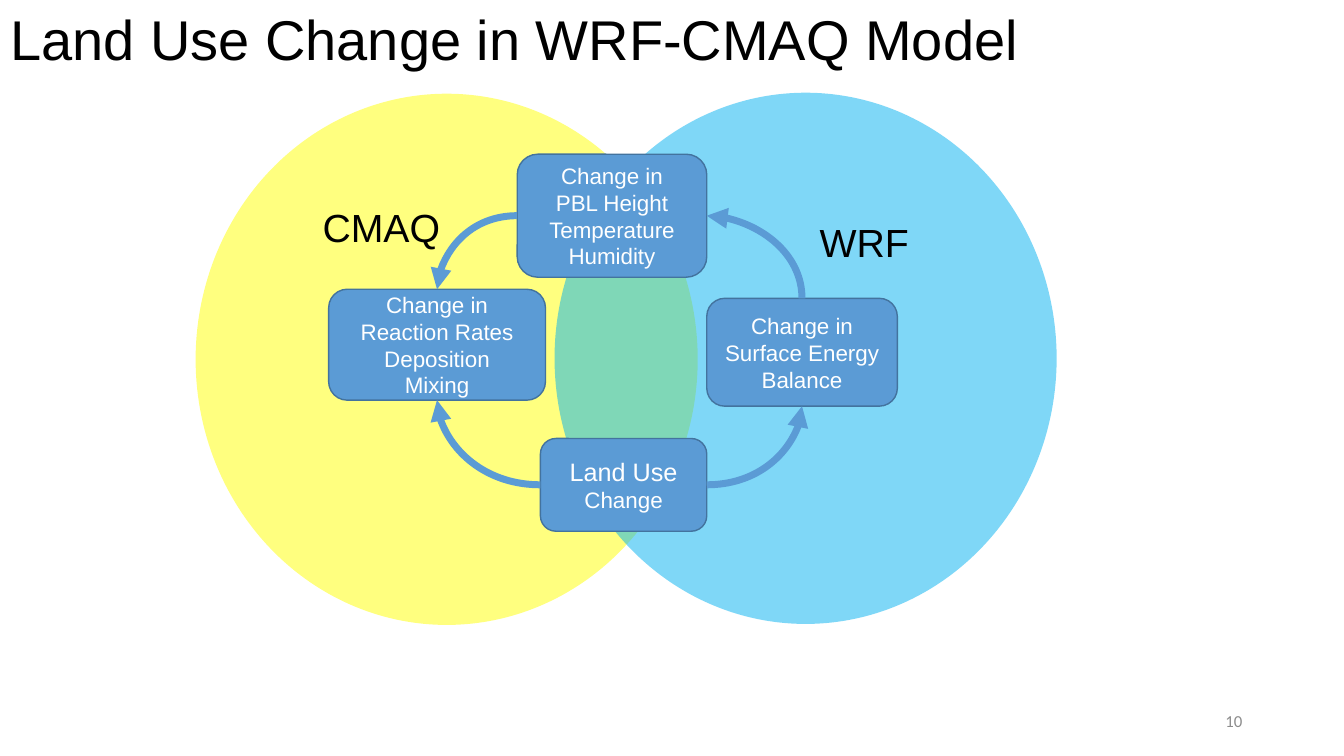
from lxml import etree
from pptx import Presentation
from pptx import util as u
from pptx.dml import color
from pptx.enum import shapes, text
from pptx.oxml import ns

COLORS = {"yellow": "FFFF00", "cyan": "00B0F0", "box": "5B9BD5", "border": "43739E",
          "black": "000000", "white": "FFFFFF", "gray": "8C8C8C"}


def rgb(name):
    return color.RGBColor.from_string(COLORS[name])


def add_run(paragraph, words, size, shade, font="Arial"):
    run = paragraph.add_run()
    run.text = words
    run.font.size = u.Pt(size)
    run.font.name = font
    run.font.color.rgb = rgb(shade)


deck = Presentation()
deck.slide_width, deck.slide_height = u.Inches(13.33), u.Inches(7.5)
slide = deck.slides.add_slide(deck.slide_layouts[5])

title = slide.shapes.title
title.left, title.top = u.Inches(0), u.Inches(0.02)
title.width, title.height = u.Inches(11.5), u.Inches(0.8)
title.text_frame.vertical_anchor = text.MSO_ANCHOR.MIDDLE
heading = title.text_frame.paragraphs[0]
heading.alignment = text.PP_ALIGN.LEFT
heading.line_spacing = 0.9
add_run(heading, "Land Use Change in WRF-CMAQ Model", 40, "black")

# Overlapping model domains: label, left, top, fill, label indent, label drop
domains = [("CMAQ", 1.94, 0.93, "yellow", 0.53, 0.32),
           ("WRF", 5.5, 0.92, "cyan", 1.9, 0.47)]
for label, left, top, fill, indent, drop in domains:
    domain = slide.shapes.add_shape(shapes.MSO_SHAPE.OVAL, u.Inches(left), u.Inches(top),
                                    u.Inches(4.98), u.Inches(5.27))
    domain.shadow.inherit = False
    domain.fill.solid()
    domain.fill.fore_color.rgb = rgb(fill)
    tint = domain._element.spPr.find(".//" + ns.qn("a:srgbClr"))
    etree.SubElement(tint, ns.qn("a:alpha")).set("val", "50000")
    domain.line.fill.background()
    frame = domain.text_frame
    frame.vertical_anchor = text.MSO_ANCHOR.TOP
    frame.margin_left, frame.margin_top = u.Inches(indent), u.Inches(drop)
    frame.paragraphs[0].alignment = text.PP_ALIGN.LEFT
    add_run(frame.paragraphs[0], label, 28, "black")

# Process steps: left, top, width, height, paragraphs of (words, size) runs
steps = {
    "land use": (5.36, 4.35, 1.65, 0.92, [[("Land Use ", 18), ("Change", 16)]]),
    "energy": (7.01, 2.96, 1.89, 1.07, [[("Change in Surface Energy Balance", 16)]]),
    "weather": (5.13, 1.53, 1.88, 1.22,
                [[(line, 16)] for line in ("Change in", "PBL Height", "Temperature", "Humidity")]),
    "chemistry": (3.26, 2.87, 2.15, 1.1,
                  [[(line, 16)] for line in ("Change in", "Reaction Rates", "Deposition", "Mixing")]),
}
boxes = {}
for step, (left, top, width, height, lines) in steps.items():
    box = slide.shapes.add_shape(shapes.MSO_SHAPE.ROUNDED_RECTANGLE, u.Inches(left),
                                 u.Inches(top), u.Inches(width), u.Inches(height))
    box.shadow.inherit = False
    box.fill.solid()
    box.fill.fore_color.rgb = rgb("box")
    box.line.color.rgb = rgb("border")
    box.line.width = u.Pt(1)
    frame = box.text_frame
    frame.word_wrap = True
    frame.vertical_anchor = text.MSO_ANCHOR.MIDDLE
    for number, runs in enumerate(lines):
        paragraph = frame.add_paragraph() if number else frame.paragraphs[0]
        paragraph.alignment = text.PP_ALIGN.CENTER
        for words, size in runs:
            add_run(paragraph, words, size, "white")
    boxes[step] = box

# Each curve leaves a box sideways and meets the next one vertically
TOP, LEFT, BOTTOM, RIGHT = range(4)
curves = [("land use", RIGHT, "energy", BOTTOM, "tailEnd"),
          ("weather", RIGHT, "energy", TOP, "headEnd"),
          ("land use", LEFT, "chemistry", BOTTOM, "tailEnd"),
          ("weather", LEFT, "chemistry", TOP, "tailEnd")]
for source, source_side, target, target_side, arrow_end in curves:
    curve = slide.shapes.add_connector(shapes.MSO_CONNECTOR.CURVE, 0, 0, 0, 0)
    curve.begin_connect(boxes[source], source_side)
    curve.end_connect(boxes[target], target_side)
    curve.line.color.rgb = rgb("box")
    curve.line.width = u.Pt(5)
    properties = curve._element.spPr
    properties.find(ns.qn("a:prstGeom")).set("prst", "curvedConnector2")
    outline = properties.find(ns.qn("a:ln"))
    etree.SubElement(outline, ns.qn("a:" + arrow_end)).set("type", "triangle")
    etree.SubElement(properties, ns.qn("a:effectLst"))

page = slide.shapes.add_textbox(u.Inches(9.42), u.Inches(6.95), u.Inches(3), u.Inches(0.4))
page.text_frame.word_wrap = True
page.text_frame.vertical_anchor = text.MSO_ANCHOR.MIDDLE
page.text_frame.paragraphs[0].alignment = text.PP_ALIGN.RIGHT
add_run(page.text_frame.paragraphs[0], "10", 12, "gray", "Calibri")

deck.save("out.pptx")
